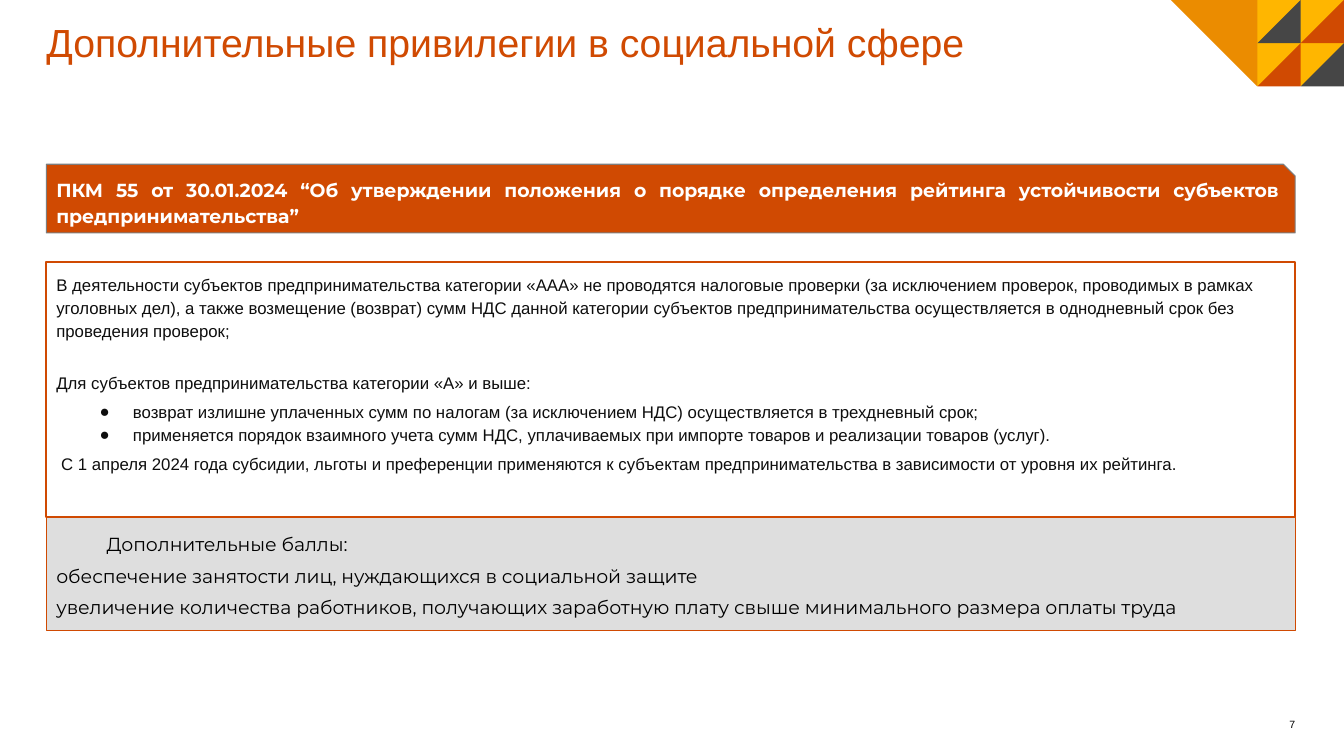
from dataclasses import dataclass
from lxml.etree import SubElement
from pptx import Presentation
from pptx.dml.color import RGBColor
from pptx.enum.shapes import MSO_SHAPE as Kind
from pptx.enum.text import MSO_ANCHOR as Anchor, MSO_AUTO_SIZE as Fit, PP_ALIGN as Align
from pptx.oxml.ns import qn
from pptx.util import Cm, Pt

ORANGE, AMBER, GOLD, GRAY = "D04A02", "EB8C00", "FFB600", "464646"
WIDE, HIGH = 33.87, 19.05
LEFT, SPAN = 1.17, 31.47
CELL = 1.09


@dataclass
class Style:
    size: float
    color: str
    font: str = "Arial"
    bold: bool = False
    lead: float = 1.15


@dataclass
class Para:
    text: str
    before: float = 0
    after: float = 0
    align: Align = Align.LEFT
    margin: float = 0
    indent: float = 0
    bullet: str = ""


@dataclass
class Box:
    top: float
    height: float
    left: float = LEFT
    width: float = SPAN
    fill: str = ""
    line: str = ""
    weight: float = 0.75
    inset: float = 0.25
    anchor: Anchor = Anchor.MIDDLE


@dataclass
class Tile:
    points: list[tuple[int, int]]
    color: str


def tint(code: str) -> RGBColor:
    return RGBColor.from_string(code)


def assign(target, values: dict) -> None:
    for name, value in values.items():
        setattr(target, name, value)


def mark(para, item: Para, color: str) -> None:
    props = para._p.get_or_add_pPr()
    props.set("marL", str(Cm(item.margin)))
    props.set("indent", str(Cm(item.indent)))
    if item.bullet:
        shade = SubElement(props, qn("a:buClr"))
        SubElement(shade, qn("a:srgbClr"), val=color)
        SubElement(props, qn("a:buFont"), typeface="Arial")
        SubElement(props, qn("a:buChar"), char=item.bullet)
    else:
        SubElement(props, qn("a:buNone"))


def write(shape, box: Box, style: Style, items: list[Para]) -> None:
    assign(shape, {"left": Cm(box.left), "top": Cm(box.top),
                   "width": Cm(box.width), "height": Cm(box.height)})
    if box.fill:
        shape.fill.solid()
        shape.fill.fore_color.rgb = tint(box.fill)
    if box.line:
        shape.line.color.rgb = tint(box.line)
        shape.line.width = Pt(box.weight)
    frame = shape.text_frame
    pad = Cm(box.inset)
    assign(frame, {"word_wrap": True, "auto_size": Fit.NONE, "vertical_anchor": box.anchor,
                   "margin_left": pad, "margin_right": pad,
                   "margin_top": pad, "margin_bottom": pad})
    for index, item in enumerate(items):
        para = frame.add_paragraph() if index else frame.paragraphs[0]
        assign(para, {"alignment": item.align, "line_spacing": style.lead,
                      "space_before": Pt(item.before), "space_after": Pt(item.after)})
        mark(para, item, style.color)
        run = para.add_run()
        run.text = item.text
        assign(run.font, {"size": Pt(style.size), "name": style.font, "bold": style.bold})
        run.font.color.rgb = tint(style.color)


def block(slide, kind: Kind, box: Box, style: Style, items: list[Para]):
    shape = slide.shapes.add_shape(kind, 0, 0, Cm(1), Cm(1))
    shape.shadow.inherit = False
    write(shape, box, style, items)
    return shape


def draw(slide, tile: Tile) -> None:
    start, *rest = [(Cm(WIDE + x * CELL), Cm(y * CELL)) for x, y in tile.points]
    path = slide.shapes.build_freeform(*start)
    path.add_line_segments(rest, close=True)
    shape = path.convert_to_shape()
    shape.shadow.inherit = False
    shape.fill.solid()
    shape.fill.fore_color.rgb = tint(tile.color)
    shape.line.fill.background()


def main() -> None:
    deck = Presentation()
    assign(deck, {"slide_width": Cm(WIDE), "slide_height": Cm(HIGH)})
    slide = deck.slides.add_slide(deck.slide_layouts[1])
    title, body = slide.placeholders

    write(title, Box(0.64, 1.02, width=26.59, inset=0, anchor=Anchor.TOP),
          Style(28, ORANGE, lead=0.85),
          [Para("Дополнительные привилегии в социальной сфере")])

    tiles = [Tile([(-2, 0), (0, 0), (0, 2), (-2, 2)], GOLD),
             Tile([(-4, 0), (-2, 2), (-2, 0)], AMBER)]
    for row in range(2):
        for col in range(2):
            x, y = col - 2, row + 1
            color = ORANGE if row != col else GRAY
            tiles.append(Tile([(x, y), (x + 1, y), (x + 1, y - 1)], color))
    for tile in tiles:
        draw(slide, tile)

    write(slide.shapes.add_textbox(0, 0, Cm(1), Cm(1)),
          Box(18.03, 0.38, left=22.84, width=9.8, inset=0, anchor=Anchor.BOTTOM),
          Style(7.5, "000000", lead=1), [Para("7", align=Align.RIGHT)])

    point = {"margin": 1.93, "indent": -0.84, "bullet": "●"}
    write(body, Box(6.6, 6.43, line=ORANGE, weight=1.5, anchor=Anchor.TOP),
          Style(12, "0E0E0E"), [
        Para("В деятельности субъектов предпринимательства категории «ААА» не проводятся "
             "налоговые проверки (за исключением проверок, проводимых в рамках уголовных дел), "
             "а также возмещение (возврат) сумм НДС данной категории субъектов "
             "предпринимательства осуществляется в однодневный срок без проведения проверок;"),
        Para("Для субъектов предпринимательства категории «А» и выше:", 20.5, align=Align.JUSTIFY),
        Para("возврат излишне уплаченных сумм по налогам (за исключением НДС) "
             "осуществляется в трехдневный срок;", 4, **point),
        Para("применяется порядок взаимного учета сумм НДС, уплачиваемых при импорте "
             "товаров и реализации товаров (услуг).", **point),
        Para("С 1 апреля 2024 года субсидии, льготы и преференции применяются к субъектам "
             "предпринимательства в зависимости от уровня их рейтинга.",
             4, align=Align.JUSTIFY, indent=0.12)])

    head = block(slide, Kind.SNIP_1_RECTANGLE,
                 Box(4.14, 1.73, fill=ORANGE, line="7D7D7D"),
                 Style(13.5, "FFFFFF", "Montserrat", True),
                 [Para("ПКМ 55 от 30.01.2024 “Об утверждении положения о порядке определения "
                       "рейтинга устойчивости субъектов предпринимательства”",
                       4, 4, Align.JUSTIFY)])
    head.adjustments[0] = 0.17

    block(slide, Kind.RECTANGLE, Box(13.03, 2.87, fill="DEDEDE", line=ORANGE),
          Style(13.5, "000000", "Montserrat"), [
        Para("Дополнительные баллы:", 4, align=Align.JUSTIFY, margin=1.27),
        Para("обеспечение занятости лиц, нуждающихся в социальной защите",
             4, align=Align.JUSTIFY),
        Para("увеличение количества работников, получающих заработную плату свыше "
             "минимального размера оплаты труда", 4, 4, Align.JUSTIFY)])

    deck.save("out.pptx")


if __name__ == "__main__":
    main()
